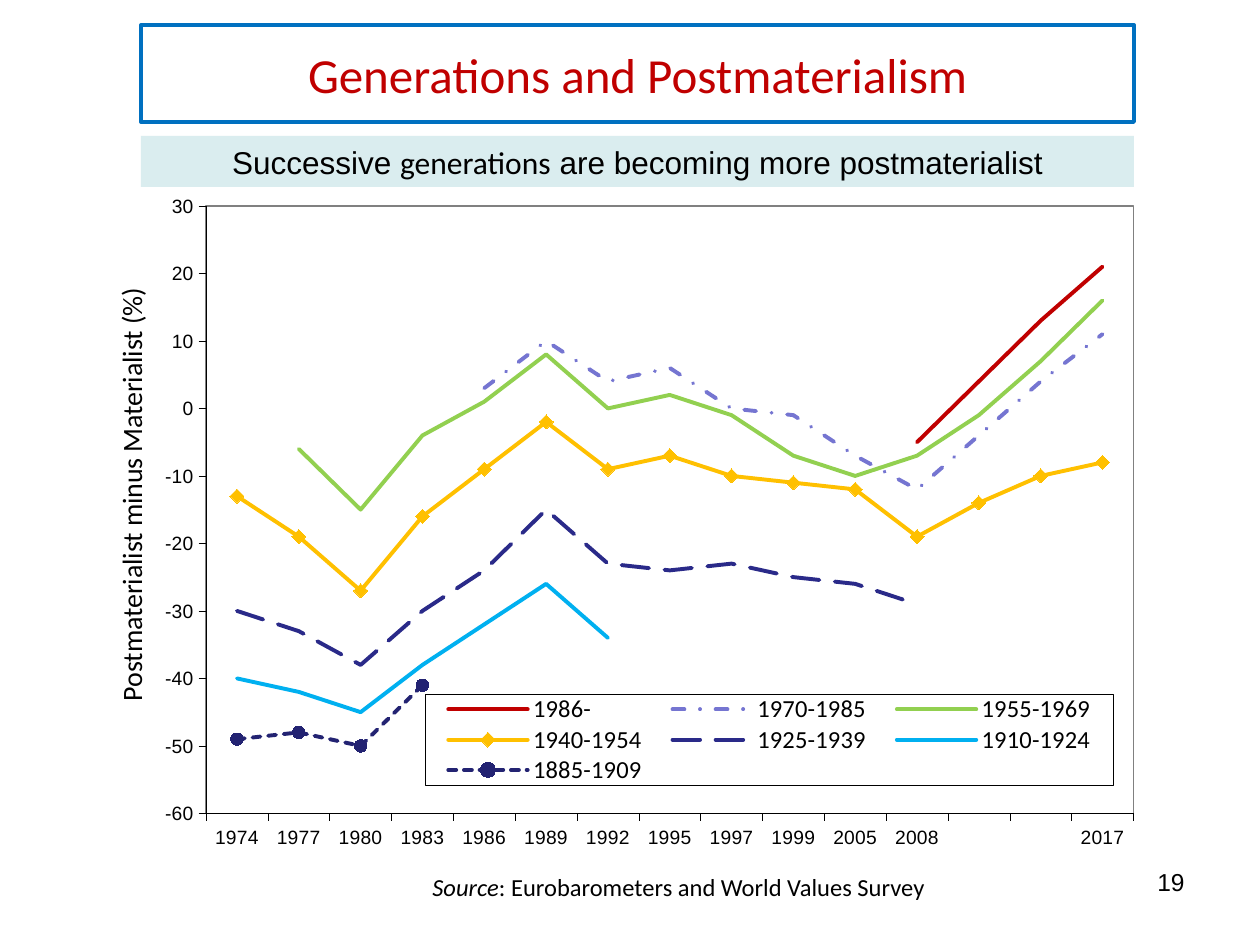
from dataclasses import dataclass
from typing import Optional

from lxml.etree import _Element
from pptx import Presentation
from pptx.chart.data import CategoryChartData
from pptx.dml.color import RGBColor
from pptx.enum.chart import (XL_AXIS_CROSSES, XL_CHART_TYPE, XL_LEGEND_POSITION,
                             XL_MARKER_STYLE, XL_TICK_LABEL_POSITION, XL_TICK_MARK)
from pptx.enum.dml import MSO_LINE
from pptx.enum.shapes import MSO_SHAPE
from pptx.enum.text import MSO_ANCHOR, MSO_AUTO_SIZE, PP_ALIGN
from pptx.oxml import parse_xml
from pptx.oxml.ns import nsdecls
from pptx.util import Emu, Pt

PX = 914400 / 126
BLACK = RGBColor(0x00, 0x00, 0x00)
WHITE = RGBColor(0xFF, 0xFF, 0xFF)
GRAY = RGBColor(0x80, 0x80, 0x80)
RED = RGBColor(0xC0, 0x00, 0x00)
BLUE = RGBColor(0x00, 0x70, 0xC0)
PALE_TEAL = RGBColor(0xDA, 0xED, 0xEF)
LILAC = RGBColor(0x75, 0x75, 0xD1)
GREEN = RGBColor(0x92, 0xD0, 0x50)
AMBER = RGBColor(0xFF, 0xC0, 0x00)
INDIGO = RGBColor(0x2A, 0x2A, 0x89)
SKY = RGBColor(0x00, 0xB0, 0xF0)
NAVY = RGBColor(0x23, 0x23, 0x72)


@dataclass(frozen=True)
class Box:
    left: int
    top: int
    width: int
    height: int

    def emu(self) -> tuple:
        return tuple(Emu(round(n * PX)) for n in
                     (self.left, self.top, self.width, self.height))


@dataclass(frozen=True)
class Words:
    text: str
    font: str = "Calibri"
    italic: bool = False


@dataclass(frozen=True)
class Generation:
    born: str
    first: int
    scores: tuple
    color: RGBColor
    dash: Optional[MSO_LINE] = None
    marker: XL_MARKER_STYLE = XL_MARKER_STYLE.NONE
    marker_size: int = 7


YEARS = ("1974", "1977", "1980", "1983", "1986", "1989", "1992", "1995",
         "1997", "1999", "2005", "2008", "", "", "2017")
GENERATIONS = (
    Generation("1986-", 11, (-5, 4, 13, 21), RED),
    Generation("1970-1985", 4, (3, 10, 4, 6, 0, -1, -7, -12, -4, 4, 11),
               LILAC, MSO_LINE.DASH_DOT),
    Generation("1955-1969", 1, (-6, -15, -4, 1, 8, 0, 2, -1, -7, -10, -7, -1, 7, 16),
               GREEN),
    Generation("1940-1954", 0, (-13, -19, -27, -16, -9, -2, -9, -7, -10, -11, -12,
                                -19, -14, -10, -8),
               AMBER, marker=XL_MARKER_STYLE.DIAMOND, marker_size=8),
    Generation("1925-1939", 0, (-30, -33, -38, -30, -24, -15, -23, -24, -23, -25,
                                -26, -29), INDIGO, MSO_LINE.LONG_DASH),
    Generation("1910-1924", 0, (-40, -42, -45, -38, -32, -26, -34), SKY),
    Generation("1885-1909", 0, (-49, -48, -50, -41), NAVY, MSO_LINE.SQUARE_DOT,
               XL_MARKER_STYLE.CIRCLE),
)


def write(frame, words: tuple, size: int, color: RGBColor = BLACK,
          align: PP_ALIGN = PP_ALIGN.LEFT) -> None:
    frame.word_wrap = True
    paragraph = frame.paragraphs[0]
    paragraph.alignment = align
    for part in words:
        run = paragraph.add_run()
        run.text = part.text
        run.font.name = part.font
        run.font.size = Pt(size)
        run.font.italic = part.italic
        run.font.color.rgb = color


def style_font(font, size: int, name: str) -> None:
    font.size = Pt(size)
    font.name = name
    font.bold = False
    font.color.rgb = BLACK


def place(element: _Element, index: int, **fractions: float) -> None:
    for layout in element.xpath("c:layout"):
        element.remove(layout)
    modes = "".join(f'<c:{axis}Mode val="edge"/>' for axis in "xy")
    values = "".join(f'<c:{key} val="{value}"/>' for key, value in fractions.items())
    target = '<c:layoutTarget val="inner"/>' if element.tag.endswith("plotArea") else ""
    element.insert(index, parse_xml(
        f'<c:layout {nsdecls("c")}><c:manualLayout>{target}{modes}{values}'
        '</c:manualLayout></c:layout>'))


def frame_properties(color: RGBColor, width: int) -> _Element:
    return parse_xml(
        f'<c:spPr {nsdecls("c", "a")}><a:solidFill><a:srgbClr val="{WHITE}"/></a:solidFill>'
        f'<a:ln w="{width}"><a:solidFill><a:srgbClr val="{color}"/></a:solidFill></a:ln>'
        '</c:spPr>')


def style_axis(axis) -> None:
    axis.has_major_gridlines = False
    axis.major_tick_mark = XL_TICK_MARK.OUTSIDE
    axis.minor_tick_mark = XL_TICK_MARK.NONE
    axis.tick_label_position = XL_TICK_LABEL_POSITION.LOW
    axis.format.line.color.rgb = BLACK
    axis.format.line.width = Pt(0.25)
    style_font(axis.tick_labels.font, 11, "Arial")


def style_series(series, generation: Generation) -> None:
    series.smooth = False
    line = series.format.line
    line.color.rgb = generation.color
    line.width = Pt(2.25)
    if generation.dash is not None:
        line.dash_style = generation.dash
    marker = series.marker
    marker.style = generation.marker
    if generation.marker != XL_MARKER_STYLE.NONE:
        marker.size = generation.marker_size
        marker.format.fill.solid()
        marker.format.fill.fore_color.rgb = generation.color
        marker.format.line.color.rgb = generation.color


def draw_trends(slide, box: Box) -> None:
    trends = CategoryChartData()
    trends.categories = YEARS
    for generation in GENERATIONS:
        gap_after = len(YEARS) - generation.first - len(generation.scores)
        trends.add_series(generation.born, (None,) * generation.first
                          + generation.scores + (None,) * gap_after)
    chart = slide.shapes.add_chart(XL_CHART_TYPE.LINE_MARKERS, *box.emu(), trends).chart
    chart.has_title = False
    style_font(chart.font, 11, "Arial")
    chart.plots[0].vary_by_categories = False
    for series, generation in zip(chart.plots[0].series, GENERATIONS):
        style_series(series, generation)
    for stroke in chart.element.xpath("//c:ser/c:spPr/a:ln"):
        stroke.set("cap", "rnd")

    scores = chart.value_axis
    style_axis(chart.category_axis)
    style_axis(scores)
    scores.minimum_scale, scores.maximum_scale, scores.major_unit = -60, 30, 10
    scores.crosses = XL_AXIS_CROSSES.MINIMUM
    caption = scores.axis_title.text_frame
    write(caption, (Words("Postmaterialist minus Materialist (%)"),), 16,
          align=PP_ALIGN.CENTER)
    caption.paragraphs[0].runs[0].font.bold = False
    body = chart.element.xpath("//c:valAx/c:title//a:bodyPr")[0]
    body.set("rot", "-5400000")
    body.set("vert", "horz")
    place(chart.element.xpath("//c:valAx/c:title")[0], 1, x=0.022, y=0.185)

    plot_area = chart.element.xpath("//c:plotArea")[0]
    place(plot_area, 0, x=0.114, y=0.077, w=0.866, h=0.851)
    plot_area.append(frame_properties(GRAY, 12700))

    chart.has_legend = True
    chart.legend.position = XL_LEGEND_POSITION.BOTTOM
    chart.legend.include_in_layout = False
    style_font(chart.legend.font, 14, "Calibri")
    legend = chart.element.xpath("//c:legend")[0]
    place(legend, 1, x=0.319, y=0.761, w=0.642, h=0.127)
    legend.xpath("c:overlay")[0].addnext(frame_properties(BLACK, 3175))


def draw_title(slide, box: Box) -> None:
    title = slide.shapes.title
    title.left, title.top, title.width, title.height = box.emu()
    title.line.color.rgb = BLUE
    title.line.width = Pt(2.25)
    title.text_frame.vertical_anchor = MSO_ANCHOR.MIDDLE
    write(title.text_frame, (Words("Generations and Postmaterialism"),), 28, RED,
          PP_ALIGN.CENTER)


def draw_finding(slide, box: Box) -> None:
    finding = slide.shapes.add_shape(MSO_SHAPE.RECTANGLE, *box.emu())
    finding.shadow.inherit = False
    finding.fill.solid()
    finding.fill.fore_color.rgb = PALE_TEAL
    finding.line.fill.background()
    write(finding.text_frame, (Words("Successive ", "Arial"), Words("generations"),
                               Words(" are becoming more postmaterialist", "Arial")),
          18, align=PP_ALIGN.CENTER)


def draw_note(slide, box: Box, words: tuple, align: PP_ALIGN) -> None:
    note = slide.shapes.add_textbox(*box.emu()).text_frame
    note.auto_size = MSO_AUTO_SIZE.NONE
    write(note, words, 14, align=align)


def main() -> None:
    """Build the slide on generations and postmaterialism."""
    deck = Presentation()
    deck.slide_width, deck.slide_height = Emu(round(1260 * PX)), Emu(round(945 * PX))
    slide = deck.slides.add_slide(deck.slide_layouts[5])
    draw_title(slide, Box(141, 25, 993, 97))
    draw_note(slide, Box(420, 866, 536, 43),
              (Words("Source", italic=True),
               Words(": Eurobarometers and World Values Survey")), PP_ALIGN.LEFT)
    draw_trends(slide, Box(84, 151, 1071, 714))
    draw_note(slide, Box(903, 861, 294, 66), (Words("19", "Arial"),), PP_ALIGN.RIGHT)
    draw_finding(slide, Box(141, 136, 993, 51))
    deck.save("out.pptx")


if __name__ == "__main__":
    main()
